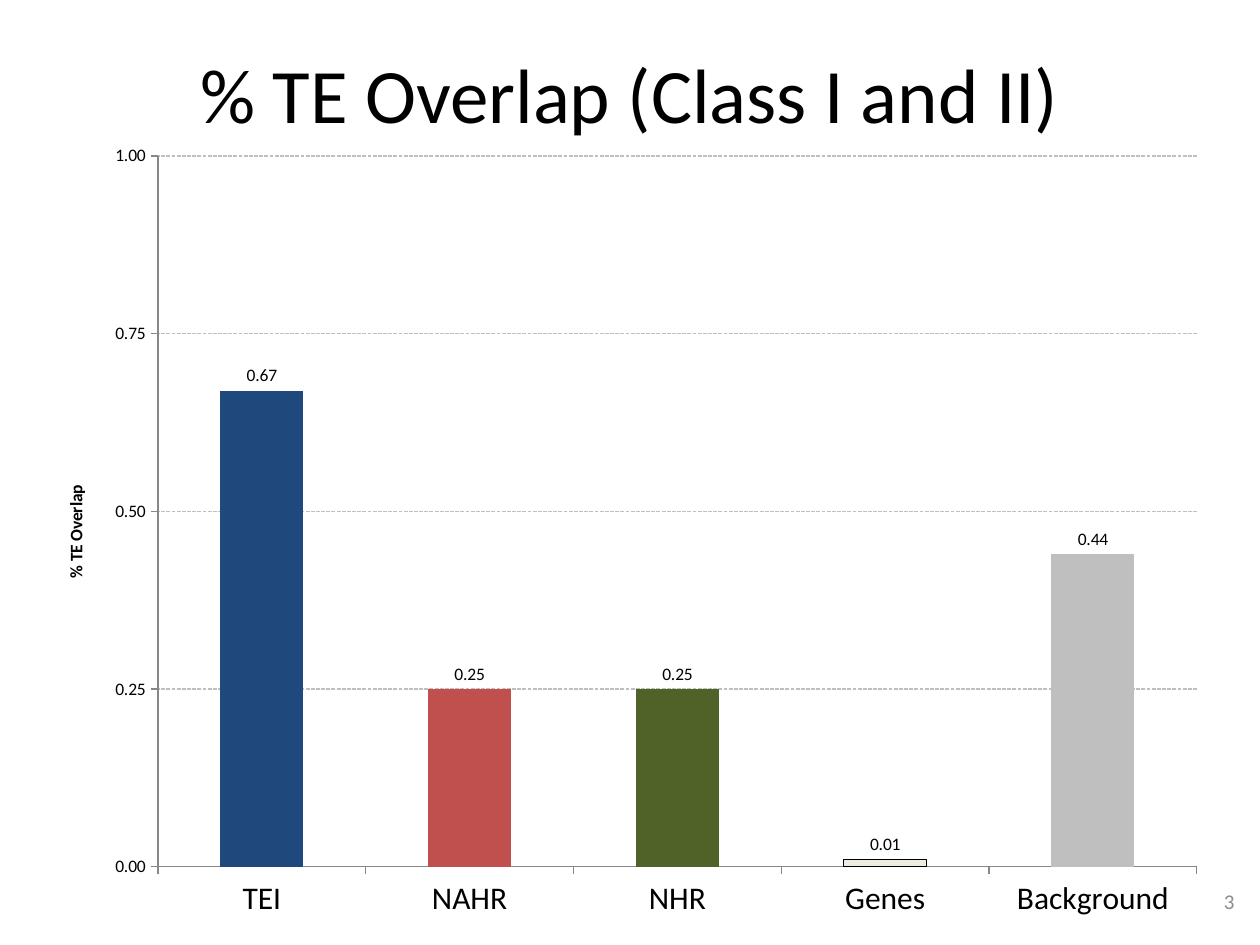
"""Build a slide with a column chart of TE overlap by class."""
from lxml.etree import SubElement
from pptx import Presentation
from pptx.chart.data import CategoryChartData
from pptx.dml.color import RGBColor
from pptx.enum.chart import XL_CHART_TYPE as ChartType
from pptx.enum.chart import XL_LABEL_POSITION as LabelPosition
from pptx.enum.chart import XL_TICK_MARK as TickMark
from pptx.enum.dml import MSO_LINE as Dash
from pptx.enum.text import MSO_ANCHOR as Anchor
from pptx.enum.text import PP_ALIGN as Align
from pptx.oxml.ns import qn
from pptx.util import Pt

PX = 914400 // 126
FONT = "Calibri"
COLORS = {
    "text": "000000", "number": "8C8C8C", "axis": "878787", "grid": "BFBFBF",
    "navy": "1F497D", "red": "C0504D", "green": "4F6228",
    "cream": "EEECE1", "gray": "BFBFBF",
}
TEXTS = [
    ("% TE Overlap (Class I and II)", (63, 14, 1134, 158), 44, "text", Align.CENTER),
    ("3", (953, 876, 294, 50), 12, "number", Align.RIGHT),
]
AXIS_TITLE = "% TE Overlap"
BARS = [
    ("TEI", 0.67, "navy"),
    ("NAHR", 0.25, "red"),
    ("NHR", 0.25, "green"),
    ("Genes", 0.01, "cream"),
    ("Background", 0.44, "gray"),
]
CHART_BOX = (39, 130, 1182, 804)
PLOT_BOX = (158, 156, 1039, 711)
VALUE_SCALE = {
    "minimum_scale": 0, "maximum_scale": 1, "major_unit": 0.25,
    "has_major_gridlines": True, "has_title": True,
}
LABEL_FORMAT = {
    "show_value": True, "number_format": "0.00",
    "number_format_is_linked": False, "position": LabelPosition.OUTSIDE_END,
}


def rgb(name):
    return RGBColor.from_string(COLORS[name])


def emu(box):
    return [length * PX for length in box]


def set_all(target, values):
    for name, value in values.items():
        setattr(target, name, value)


def style_font(font, size, color="text", bold=False):
    set_all(font, {"name": FONT, "size": Pt(size), "bold": bold})
    font.color.rgb = rgb(color)


def style_line(line, color, width=0.75):
    line.color.rgb = rgb(color)
    line.width = Pt(width)


def add_text(slide, text, box, size, color, align):
    frame = slide.shapes.add_textbox(*emu(box)).text_frame
    set_all(frame, {"word_wrap": True, "vertical_anchor": Anchor.MIDDLE})
    paragraph = frame.paragraphs[0]
    paragraph.alignment = align
    run = paragraph.add_run()
    run.text = text
    style_font(run.font, size, color)


def place_plot(chart):
    plot_area = chart._chartSpace.find(".//" + qn("c:plotArea"))
    layout = plot_area.find(qn("c:layout"))
    if layout is None:
        layout = SubElement(plot_area, qn("c:layout"))
        plot_area.insert(0, layout)
    manual = SubElement(layout, qn("c:manualLayout"))
    left, top, width, height = CHART_BOX
    plot_left, plot_top, plot_width, plot_height = PLOT_BOX
    settings = {
        "layoutTarget": "inner", "xMode": "edge", "yMode": "edge",
        "x": round((plot_left - left) / width, 4),
        "y": round((plot_top - top) / height, 4),
        "w": round(plot_width / width, 4),
        "h": round(plot_height / height, 4),
    }
    for tag, value in settings.items():
        SubElement(manual, qn("c:" + tag)).set("val", str(value))


def style_axes(chart):
    values, categories = chart.value_axis, chart.category_axis
    set_all(values, VALUE_SCALE)
    for axis, size in ((values, 10), (categories, 18)):
        axis.major_tick_mark = TickMark.OUTSIDE
        axis.minor_tick_mark = TickMark.NONE
        style_font(axis.tick_labels.font, size)
        style_line(axis.format.line, "axis")
    set_all(values.tick_labels,
            {"number_format": "0.00", "number_format_is_linked": False})
    grid = values.major_gridlines.format.line
    style_line(grid, "grid")
    grid.dash_style = Dash.SQUARE_DOT
    title = values.axis_title.text_frame
    title.text = AXIS_TITLE
    style_font(title.paragraphs[0].runs[0].font, 10, bold=True)
    body = chart._chartSpace.find(
        "/".join([".//" + qn("c:valAx"), qn("c:title"), "", qn("a:bodyPr")]))
    body.set("rot", "-5400000")
    body.set("vert", "horz")


def add_overlap_chart(slide):
    names, overlaps, fills = zip(*BARS)
    data = CategoryChartData(number_format="0.00")
    data.categories = names
    data.add_series("Series 1", overlaps)
    chart = slide.shapes.add_chart(
        ChartType.COLUMN_CLUSTERED, *emu(CHART_BOX), data).chart
    set_all(chart, {"has_legend": False, "has_title": False})
    style_font(chart.font, 10)
    style_axes(chart)
    plot = chart.plots[0]
    set_all(plot, {"gap_width": 150, "vary_by_categories": False})
    series = plot.series[0]
    series.invert_if_negative = False
    for index, fill in enumerate(fills):
        bar = series.points[index].format
        bar.fill.solid()
        bar.fill.fore_color.rgb = rgb(fill)
        if fill == "cream":
            style_line(bar.line, "text")
    labels = series.data_labels
    set_all(labels, LABEL_FORMAT)
    style_font(labels.font, 10)
    place_plot(chart)


def main():
    deck = Presentation()
    deck.slide_width, deck.slide_height = emu((1260, 945))
    slide = deck.slides.add_slide(deck.slide_layouts[6])
    title, number = TEXTS
    add_text(slide, *title)
    add_overlap_chart(slide)
    add_text(slide, *number)
    deck.save("out.pptx")


if __name__ == "__main__":
    main()
